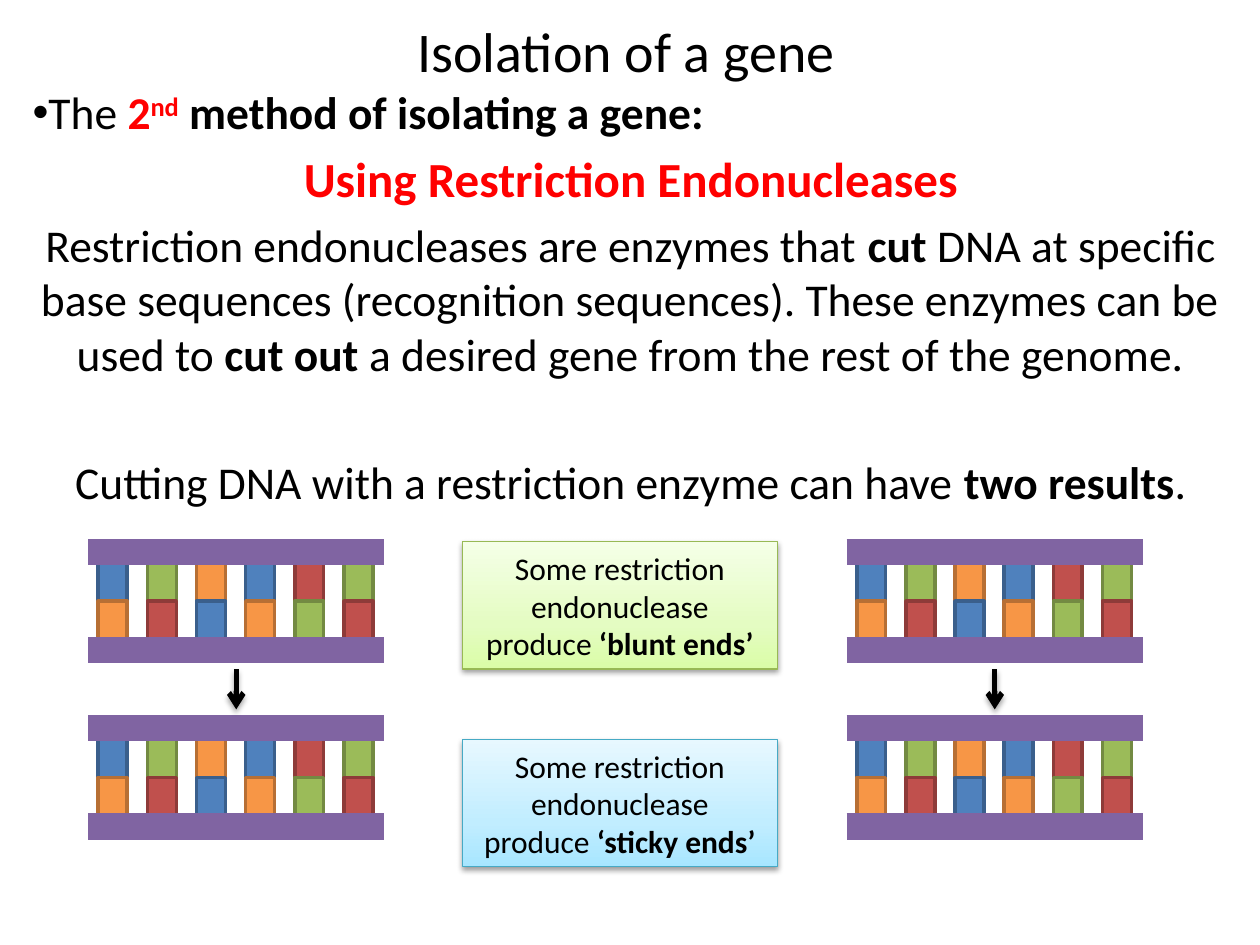
import pptx
import pptx.util
import pptx.dml.color
import pptx.enum.dml
import pptx.enum.shapes
import pptx.enum.text
import pptx.oxml
import pptx.oxml.ns

Inches, Pt = pptx.util.Inches, pptx.util.Pt
ALIGN = pptx.enum.text.PP_ALIGN
ANCHOR = pptx.enum.text.MSO_ANCHOR
NS = pptx.oxml.ns.nsdecls("a")

THEME = {
    "font": "Calibri", "text": "000000", "accent": "FF0000", "strand": "8064A2",
    "title": 32, "heading": 28, "body": 26, "label": 18,
    "bases": {"A": ("4F81BD", "3A5F8C"), "T": ("F79646", "B76F34"),
              "G": ("9BBB59", "738A42"), "C": ("C0504D", "8E3B39")},
    "green": {"stops": ("DAFDA7", "E4FCC2", "F5FFE7"), "line": "98B955"},
    "blue": {"stops": ("A7E6FF", "C1EDFF", "E7F8FF"), "line": "46AAC5"},
}

BOLD = {"bold": True}
RED = {"bold": True, "color": THEME["accent"]}
TITLE = [{"runs": [("Isolation of a gene", {})], "size": THEME["title"]}]
BODY = [
    {"runs": [("The ", {}), ("2", RED), ("nd", {**RED, "baseline": 30000}),
              (" method of isolating a gene:", BOLD)],
     "bullet": True, "alignment": ALIGN.LEFT, "space_before": Pt(5.2)},
    {"runs": [("Using Restriction Endonucleases", RED)],
     "size": THEME["heading"], "space_before": Pt(5.6)},
    {"runs": [("Restriction endonucleases are enzymes that ", {}), ("cut", BOLD),
              (" DNA at specific base sequences (recognition sequences). "
               "These enzymes can be used to ", {}), ("cut out", BOLD),
              (" a desired gene from the rest of the genome.", {})],
     "space_before": Pt(5.2)},
    {"runs": [("Cutting DNA with a restriction enzyme can have ", {}),
              ("two results", BOLD), (".", {})],
     "space_before": Pt(42)},
]
LABELS = [("‘blunt ends’", 4.3, THEME["green"]), ("‘sticky ends’", 5.87, THEME["blue"])]

SEQUENCE = "AGTACG"
PAIR = {"A": "T", "T": "A", "G": "C", "C": "G"}
LEFT_X, RIGHT_X, BEFORE_Y, AFTER_Y = 0.7, 6.72, 4.38, 5.78
LADDER_W, STRAND_GAP = 2.35, 0.78
RUNG_INSET, RUNG_PITCH, BASE_W, BASE_H = 0.08, 0.39, 0.23, 0.31
# Left, top, then where the upper and lower strands are cut (from the left end)
LADDERS = [
    (LEFT_X, BEFORE_Y, None, None),
    (LEFT_X, AFTER_Y, 1.17, 1.17),
    (RIGHT_X, BEFORE_Y, None, None),
    (RIGHT_X, AFTER_Y, 0.39, 1.95),
]


def rgb(value):
    return pptx.dml.color.RGBColor.from_string(value)


def add_effects(shape, alpha=None, distance=0):
    """Give the shape a soft shadow below it, or none when alpha is None."""
    shadow = "" if alpha is None else (
        f'<a:outerShdw blurRad="40000" dist="{distance}" dir="5400000" rotWithShape="0">'
        f'<a:srgbClr val="000000"><a:alpha val="{alpha * 1000}"/></a:srgbClr></a:outerShdw>')
    shape._element.spPr.append(
        pptx.oxml.parse_xml(f"<a:effectLst {NS}>{shadow}</a:effectLst>"))


def write(tf, paragraphs, size, anchor):
    tf.word_wrap = True
    tf.vertical_anchor = anchor
    for i, para in enumerate(paragraphs):
        p = tf.paragraphs[0] if i == 0 else tf.add_paragraph()
        p.alignment = para.get("alignment", ALIGN.CENTER)
        if "space_before" in para:
            p.space_before = para["space_before"]
        if para.get("bullet"):
            pPr = p._p.get_or_add_pPr()
            pPr.set("marL", "0")
            pPr.set("indent", str(-Inches(0.38)))
            pPr.append(pptx.oxml.parse_xml(f'<a:buFont {NS} typeface="Arial"/>'))
            pPr.append(pptx.oxml.parse_xml(f'<a:buChar {NS} char="•"/>'))
        for text, style in para["runs"]:
            r = p.add_run()
            r.text = text
            fmt = {"name": THEME["font"], "size": Pt(para.get("size", size)),
                   "bold": style.get("bold", False)}
            for name, value in fmt.items():
                setattr(r.font, name, value)
            r.font.color.rgb = rgb(style.get("color", THEME["text"]))
            if "baseline" in style:
                r._r.get_or_add_rPr().set("baseline", str(style["baseline"]))


def add_text(s, box, paragraphs, size, anchor):
    sp = s.shapes.add_textbox(*map(Inches, box))
    write(sp.text_frame, paragraphs, size, anchor)


def add_rect(s, box, line, width):
    sp = s.shapes.add_shape(pptx.enum.shapes.MSO_SHAPE.RECTANGLE, *map(Inches, box))
    sp.line.color.rgb = rgb(line)
    sp.line.width = Pt(width)
    return sp


def add_line(s, ends, color, width):
    line = s.shapes.add_connector(
        pptx.enum.shapes.MSO_CONNECTOR.STRAIGHT, *map(Inches, ends))
    line.line.color.rgb = rgb(color)
    line.line.width = Pt(width)
    return line


def add_ladder(s, left, top, *cuts):
    for i, base in enumerate(SEQUENCE):
        for row, letter in enumerate((base, PAIR[base])):
            fill, edge = THEME["bases"][letter]
            x = left + RUNG_INSET + i * RUNG_PITCH
            y = top + RUNG_INSET + row * BASE_H
            sp = add_rect(s, (x, y, BASE_W, BASE_H), edge, 2)
            sp.shadow.inherit = False
            sp.fill.solid()
            sp.fill.fore_color.rgb = rgb(fill)
    for row, cut in enumerate(cuts):
        y = top + row * STRAND_GAP
        stops = [0, LADDER_W] if cut is None else [0, cut, LADDER_W]
        for start, end in zip(stops, stops[1:]):
            add_effects(add_line(s, (left + start, y, left + end, y), THEME["strand"], 15))


def add_arrow(s, left):
    x = left + LADDER_W / 2
    arrow = add_line(s, (x, 5.31, x, 5.63), THEME["text"], 3)
    arrow.line._get_or_add_ln().append(
        pptx.oxml.parse_xml(f'<a:tailEnd {NS} type="arrow"/>'))
    add_effects(arrow, 35, 23000)


def add_label(s, ending, top, colors):
    sp = add_rect(s, (3.67, top, 2.5, 1.01), colors["line"], 0.75)
    sp.fill.gradient()
    sp.fill.gradient_angle = 90
    stops = "".join(f'<a:gs pos="{pos}"><a:srgbClr val="{color}"/></a:gs>'
                    for pos, color in zip((0, 35000, 100000), colors["stops"]))
    old = sp._element.spPr.find(".//" + pptx.oxml.ns.qn("a:gsLst"))
    old.getparent().replace(old, pptx.oxml.parse_xml(f"<a:gsLst {NS}>{stops}</a:gsLst>"))
    add_effects(sp, 38, 20000)
    runs = [("Some restriction endonuclease produce ", {}), (ending, BOLD)]
    write(sp.text_frame, [{"runs": runs}], THEME["label"], ANCHOR.MIDDLE)


def main():
    prs = pptx.Presentation()
    prs.slide_width, prs.slide_height = Inches(10), Inches(7.5)
    s = prs.slides.add_slide(prs.slide_layouts[6])
    add_text(s, (0.47, 0.16, 9, 0.48), TITLE, THEME["title"], ANCHOR.MIDDLE)
    add_text(s, (0.16, 0.62, 9.69, 6.72), BODY, THEME["body"], ANCHOR.TOP)
    for ladder in LADDERS:
        add_ladder(s, *ladder)
    for left in (LEFT_X, RIGHT_X):
        add_arrow(s, left)
    for label in LABELS:
        add_label(s, *label)
    prs.save("out.pptx")


if __name__ == "__main__":
    main()
